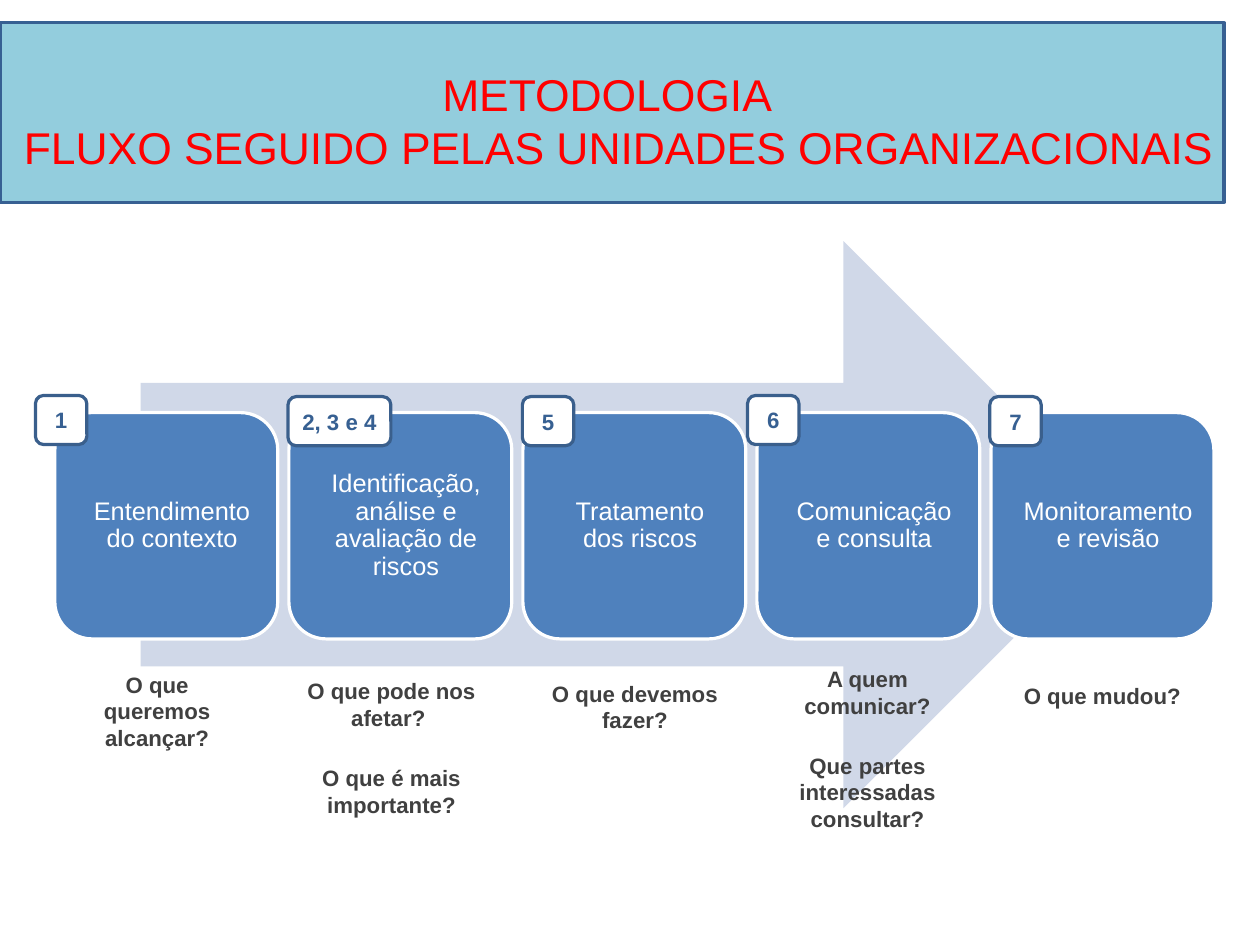
from pptx import Presentation
from pptx.dml.color import RGBColor
from pptx.enum.shapes import MSO_SHAPE as Preset
from pptx.enum.text import MSO_ANCHOR as Anchor, MSO_AUTO_SIZE as AutoSize, PP_ALIGN as Align
from pptx.util import Cm, Inches, Pt

# Content
TITLE = ["METODOLOGIA ", " FLUXO SEGUIDO PELAS UNIDADES ORGANIZACIONAIS"]
# Step text, badge (text, left, top, width), questions (box, lines)
STEPS = [
    ("Entendimento do contexto", ("1", 0.31, 3.46, 0.45),
     ((0.55, 5.82, 1.65, 0.79), ["O que queremos alcançar?"])),
    ("Identificação, análise e avaliação de riscos", ("2, 3 e 4", 2.52, 3.47, 0.9),
     ((2.52, 5.88, 1.81, 1.26), ["O que pode nos afetar? ", "O que é mais importante?"])),
    ("Tratamento dos riscos", ("5", 4.57, 3.47, 0.45),
     ((4.65, 5.9, 1.81, 0.56), ["O que devemos fazer?"])),
    ("Comunicação e consulta", ("6", 6.54, 3.46, 0.45),
     ((6.68, 5.77, 1.82, 1.49), ["A quem comunicar?", "Que partes interessadas consultar?"])),
    ("Monitoramento e revisão", ("7", 8.66, 3.47, 0.45),
     ((8.81, 5.92, 1.67, 0.33), ["O que mudou?"])),
]
COLORS = {
    "arrow": "D0D8E8", "step": "4F81BD", "white": "FFFFFF", "badge_line": "3A5F8C",
    "badge_text": "376092", "question": "404040", "banner": "93CDDD",
    "banner_line": "376092", "title": "FF0000",
}

# Layout
FIRST_LEFT, LAST_LEFT = 0.48, 8.67
STEP_TOP, STEP_WIDTH, STEP_HEIGHT = 3.61, 1.95, 1.98
PITCH = (LAST_LEFT - FIRST_LEFT) / (len(STEPS) - 1)
BADGE_HEIGHT = 0.43
QUESTION_GAP = 21


def color(name):
    return RGBColor.from_string(COLORS[name])


def add_box(slide, preset, box, fill, line=None):
    shape = slide.shapes.add_shape(preset, *map(Inches, box))
    shape.shadow.inherit = False
    shape.fill.solid()
    shape.fill.fore_color.rgb = color(fill)
    if line:
        shape.line.color.rgb = color(line)
        shape.line.width = Pt(2)
    else:
        shape.line.fill.background()
    return shape


def write(shape, lines, size, font_color, bold=False, anchor=Anchor.MIDDLE,
          insets=(0.1, 0.05, 0.1, 0.05), spacing=1.0, gap=0):
    frame = shape.text_frame
    frame.word_wrap = True
    frame.auto_size = AutoSize.NONE
    frame.vertical_anchor = anchor
    (frame.margin_left, frame.margin_top,
     frame.margin_right, frame.margin_bottom) = map(Inches, insets)
    frame.text = "\n".join(lines)
    for index, paragraph in enumerate(frame.paragraphs):
        paragraph.alignment = Align.CENTER
        paragraph.line_spacing = spacing
        paragraph.space_before = Pt(gap if index else 0)
        paragraph.font.name = "Arial"
        paragraph.font.size = Pt(size)
        paragraph.font.bold = bold
        paragraph.font.color.rgb = color(font_color)


def main():
    presentation = Presentation()
    presentation.slide_width, presentation.slide_height = Cm(28), Cm(21)
    slide = presentation.slides.add_slide(presentation.slide_layouts[5])

    # Background arrow
    add_box(slide, Preset.RIGHT_ARROW, (1.23, 2.11, 8.63, 4.96), "arrow")

    # Steps with their badges and questions
    for index, (text, badge, (question_box, questions)) in enumerate(STEPS):
        left = FIRST_LEFT + index * PITCH
        step = add_box(slide, Preset.ROUNDED_RECTANGLE,
                       (left, STEP_TOP, STEP_WIDTH, STEP_HEIGHT), "step", "white")
        write(step, [text], 16, "white", insets=(0.17, 0.17, 0.07, 0.17), spacing=0.9)

        number, badge_left, badge_top, badge_width = badge
        label = add_box(slide, Preset.ROUNDED_RECTANGLE,
                        (badge_left, badge_top, badge_width, BADGE_HEIGHT),
                        "white", "badge_line")
        write(label, [number], 14, "badge_text", bold=True)

        question = slide.shapes.add_textbox(*map(Inches, question_box))
        write(question, questions, 14, "question", bold=True,
              anchor=Anchor.TOP, gap=QUESTION_GAP)

    # Banner with the title in front of it
    add_box(slide, Preset.RECTANGLE, (0, 0.2, 10.71, 1.57), "banner", "banner_line")
    title = slide.shapes.title
    title.left, title.top, title.width, title.height = map(Inches, (0, 0.12, 10.71, 1.86))
    write(title, TITLE, 28, "title", insets=(0, 0, 0, 0))
    title.element.getparent().append(title.element)

    presentation.save("out.pptx")


if __name__ == "__main__":
    main()
